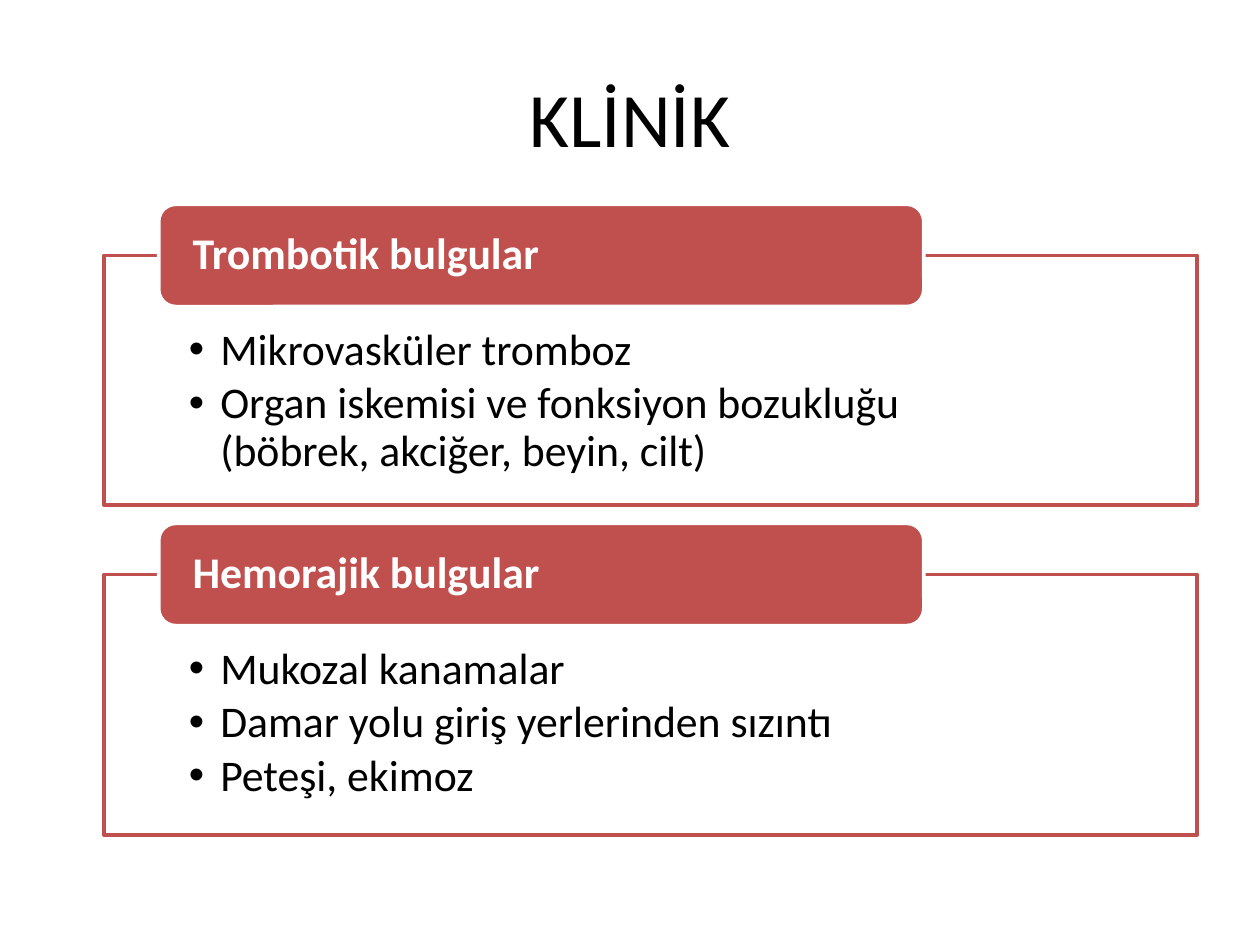
from lxml.etree import SubElement
from pptx import Presentation
from pptx.dml.color import RGBColor as RGB
from pptx.enum.shapes import MSO_SHAPE as Shape
from pptx.enum.text import MSO_ANCHOR as Anchor, PP_ALIGN as Align
from pptx.oxml.ns import qn
from pptx.util import Pt

RED = RGB(0xC0, 0x50, 0x4D)
WHITE = RGB(0xFF, 0xFF, 0xFF)
BLACK = RGB(0, 0, 0)
FONT = "Calibri"
INDENT = Pt(18)


def write(frame, lines, size=25, color=BLACK, bold=False, align=Align.LEFT,
          anchor=Anchor.TOP, insets=(0, 0, 0, 0), spacing=0.9, after=0,
          bullet=False):
    frame.word_wrap = True
    frame.vertical_anchor = anchor
    (frame.margin_left, frame.margin_top,
     frame.margin_right, frame.margin_bottom) = [Pt(n) for n in insets]
    for i, line in enumerate(lines):
        para = frame.add_paragraph() if i else frame.paragraphs[0]
        para.text = line
        para.alignment = align
        para.line_spacing = spacing
        para.space_before = Pt(0)
        para.space_after = Pt(after)
        if bullet:
            para.level = 1
            props = para._p.get_or_add_pPr()
            props.set("marL", str(INDENT))
            props.set("indent", str(-INDENT))
            SubElement(props, qn("a:buFont"), typeface="Arial")
            SubElement(props, qn("a:buChar"), char="•")
        for run in para.runs:
            font = run.font
            font.name, font.size, font.bold = FONT, Pt(size), bold
            font.color.rgb = color


def add_box(slide, kind, left, top, width, height, fill, line):
    box = slide.shapes.add_shape(kind, Pt(left), Pt(top), Pt(width), Pt(height))
    box.shadow.inherit = False
    box.fill.solid()
    box.fill.fore_color.rgb = fill
    box.line.color.rgb = line
    box.line.width = Pt(2)
    return box


def add_title(slide, text, left, top, width, height):
    title = slide.shapes.title
    title.left, title.top = Pt(left), Pt(top)
    title.width, title.height = Pt(width), Pt(height)
    write(title.text_frame, [text], size=44, align=Align.CENTER,
          anchor=Anchor.MIDDLE, spacing=1.0)


def add_section(slide, head, items, left, top, width, height):
    # Framed list, slightly see-through
    body = add_box(slide, Shape.RECTANGLE, left, top, width, height, WHITE, RED)
    tint = body.fill._xPr.find(qn("a:solidFill"))[0]
    SubElement(tint, qn("a:alpha"), val="90000")
    write(body.text_frame, items, insets=(48.4, 41, 48.4, 13.5),
          after=3.75, bullet=True)

    # Heading tab, centred on the top edge of the frame
    tall = 58.4
    tab = add_box(slide, Shape.ROUNDED_RECTANGLE, left + width * 0.05,
                  top - tall / 2, width * 0.7, tall, RED, WHITE)
    write(tab.text_frame, [head], color=WHITE, bold=True,
          anchor=Anchor.MIDDLE, insets=(16.5, 0, 16.5, 0))


def main():
    deck = Presentation()
    deck.slide_width, deck.slide_height = Pt(720), Pt(540)
    slide = deck.slides.add_slide(deck.slide_layouts[5])
    add_title(slide, "KLİNİK", 36, 21.6, 648, 90)

    # Sections stacked with the heading tab in the gap
    sections = [
        ("Trombotik bulgular", 142.6,
         ["Mikrovasküler tromboz",
          "Organ iskemisi ve fonksiyon bozukluğu\v(böbrek, akciğer, beyin, cilt)"]),
        ("Hemorajik bulgular", 149,
         ["Mukozal kanamalar",
          "Damar yolu giriş yerlerinden sızıntı",
          "Peteşi, ekimoz"]),
    ]
    top, gap = 146, 39.7
    for head, height, items in sections:
        add_section(slide, head, items, 59.5, top, 624.5, height)
        top += height + gap

    deck.save("out.pptx")


if __name__ == "__main__":
    main()
